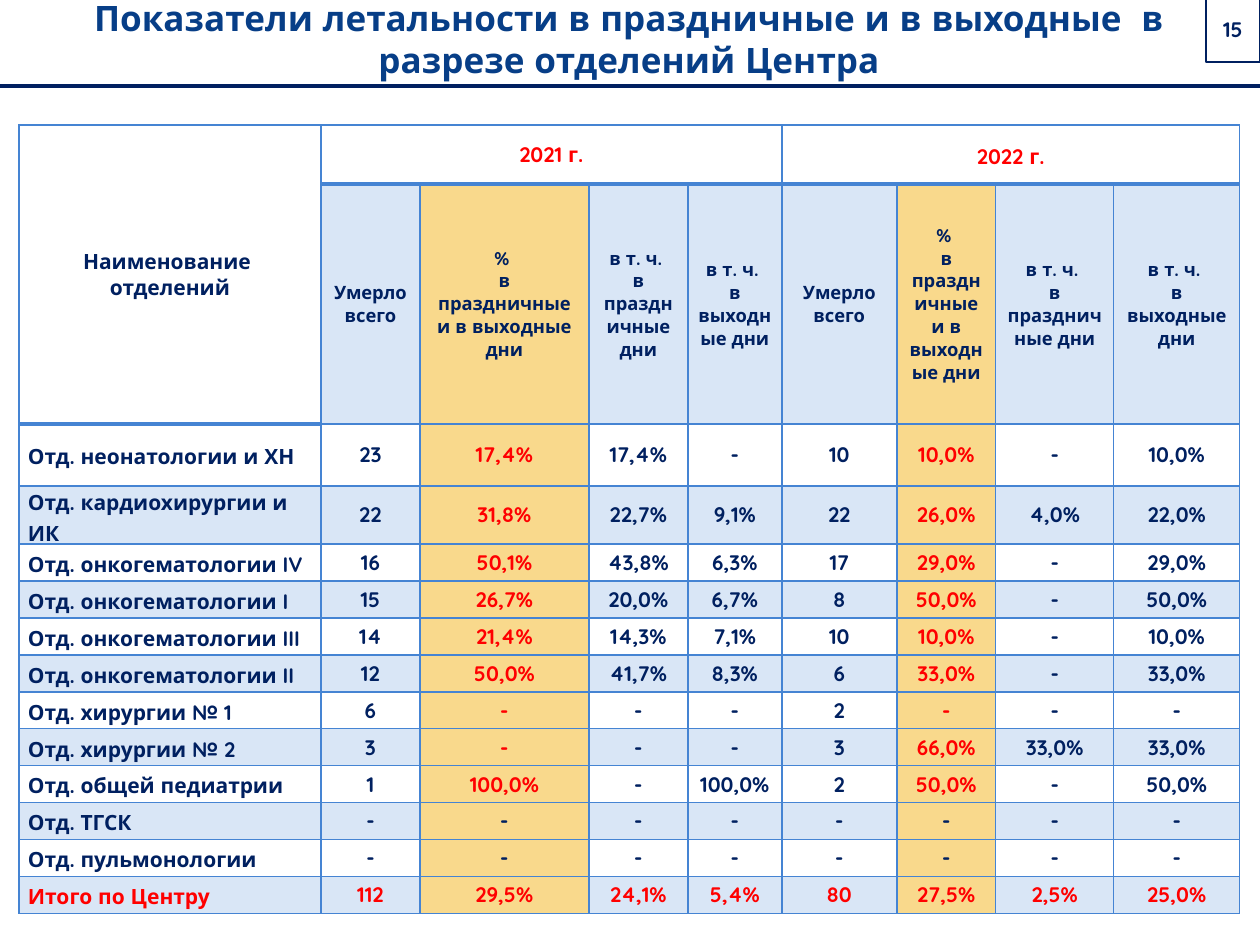
from lxml import etree
from pptx import Presentation
from pptx import util as u
from pptx.dml.color import RGBColor
from pptx.enum import shapes, text
from pptx.oxml import ns

PX = 914400 / 126
NAVY, RED, BLUE, YELLOW = "002060", "FF0000", "4584D3", "F9D98C"
CENTER = text.PP_ALIGN.CENTER


def px(value):
    return u.Emu(round(value * PX))


def write(frame, lines, size, color, align=CENTER, spacing=None):
    frame.word_wrap = True
    frame.vertical_anchor = text.MSO_ANCHOR.MIDDLE
    for index, line in enumerate(lines):
        paragraph = frame.add_paragraph() if index else frame.paragraphs[0]
        paragraph.alignment = align
        if spacing:
            paragraph.line_spacing = spacing
        run = paragraph.add_run()
        run.text = line
        run.font.name, run.font.size, run.font.bold = "Quicksand", u.Pt(size), True
        run.font.color.rgb = RGBColor.from_string(color)


presentation = Presentation()
presentation.slide_width, presentation.slide_height = px(1260), px(945)
slide = presentation.slides.add_slide(presentation.slide_layouts[6])

# Title
title = slide.shapes.add_textbox(px(62), px(9), px(1134), px(58))
write(title.text_frame,
      ["Показатели летальности в праздничные и в выходные  в разрезе отделений Центра"],
      20, "073E87")

# Rule under the title
rule = slide.shapes.add_connector(shapes.MSO_CONNECTOR.STRAIGHT, 0, px(86), px(1260), px(86))
rule.line.color.rgb = RGBColor.from_string(NAVY)
rule.line.width = u.Pt(2.25)
etree.SubElement(rule.element.spPr, ns.qn("a:effectLst"))

# Page number
badge = slide.shapes.add_shape(shapes.MSO_SHAPE.ACTION_BUTTON_CUSTOM,
                               px(1206), px(-4), px(54), px(66))
badge.shadow.inherit = False
badge.fill.background()
badge.line.color.rgb = RGBColor.from_string(NAVY)
badge.line.width = u.Pt(1)
badge.element.spPr.xfrm.set("flipH", "1")
write(badge.text_frame, ["15"], 12, NAVY)

# Table contents
percent = ["% ", "в праздничные и в выходные дни"]
holidays = ["в т. ч. ", "в праздничные дни"]
weekends = ["в т. ч. ", "в выходные дни"]
year_columns = [["Умерло всего"], percent, holidays, weekends]
departments = [
    "Отд. неонатологии и ХН|23|17,4%|17,4%|-|10|10,0%|-|10,0%",
    "Отд. кардиохирургии и ИК|22|31,8%|22,7%|9,1%|22|26,0%|4,0%|22,0%",
    "Отд. онкогематологии IV|16|50,1%|43,8%|6,3%|17|29,0%|-|29,0%",
    "Отд. онкогематологии I|15|26,7%|20,0%|6,7%|8|50,0%|-|50,0%",
    "Отд. онкогематологии III|14|21,4%|14,3%|7,1%|10|10,0%|-|10,0%",
    "Отд. онкогематологии II|12|50,0%|41,7%|8,3%|6|33,0%|-|33,0%",
    "Отд. хирургии № 1|6|-|-|-|2|-|-|-",
    "Отд. хирургии № 2|3|-|-|-|3|66,0%|33,0%|33,0%",
    "Отд. общей педиатрии|1|100,0%|-|100,0%|2|50,0%|-|50,0%",
    "Отд. ТГСК|-|-|-|-|-|-|-|-",
    "Отд. пульмонологии|-|-|-|-|-|-|-|-",
    "Итого по Центру|112|29,5%|24,1%|5,4%|80|27,5%|2,5%|25,0%",
]
rows = [
    [["Наименование ", "отделений"], ["2021 г."], [], [], [], ["2022 г."], [], [], []],
    [[]] + year_columns * 2,
] + [[[value] for value in line.split("|")] for line in departments]
total_row = len(rows) - 1

# Table grid
widths = [302, 99, 169, 99, 94, 115, 99, 118, 126]
heights = [59, 240, 62] + [37] * 11
table = slide.shapes.add_table(len(rows), len(widths), px(19), px(125),
                               px(sum(widths)), px(sum(heights))).table
table.first_row = table.horz_banding = False
for column, width in zip(table.columns, widths):
    column.width = px(width)
for row, height in zip(table.rows, heights):
    row.height = px(height)
table.cell(0, 0).merge(table.cell(1, 0))
table.cell(0, 1).merge(table.cell(0, 4))
table.cell(0, 5).merge(table.cell(0, 8))

for r, row in enumerate(rows):
    for c, lines in enumerate(row):
        cell = table.cell(r, c)
        properties = cell._tc.get_or_add_tcPr()

        # Borders, heavier below the header cells
        heavy_top = r == 1 or (r == 2 and c == 0)
        heavy_bottom = r == 0 or (r == 1 and c == 0)
        for side, points in (("L", 1), ("R", 1), ("T", 1 + heavy_top), ("B", 1 + heavy_bottom)):
            border = etree.SubElement(properties, ns.qn("a:ln" + side), w=str(u.Pt(points)))
            paint = etree.SubElement(border, ns.qn("a:solidFill"))
            etree.SubElement(paint, ns.qn("a:srgbClr"), val=BLUE)

        # Fill: yellow share columns, pale blue on odd rows
        highlighted = r > 0 and c in (2, 6)
        if highlighted:
            cell.fill.solid()
            cell.fill.fore_color.rgb = RGBColor.from_string(YELLOW)
        elif r % 2 and not (r == 1 and c == 0):
            cell.fill.solid()
            cell.fill.fore_color.rgb = RGBColor.from_string(BLUE)
            tint = properties.find(ns.qn("a:solidFill"))[0]
            etree.SubElement(tint, ns.qn("a:alpha"), val="20000")
        else:
            cell.fill.background()

        # Text
        if not lines:
            continue
        if r > 1 or (r == 1 and c in (3, 4, 7, 8)):
            cell.margin_left = cell.margin_right = px(9)
            cell.margin_top = cell.margin_bottom = 0
        elif r == 0 and c == 5:
            cell.margin_left = cell.margin_right = px(15)
            cell.margin_top = cell.margin_bottom = 0
        red = r == total_row or (r == 0 and c > 0) or (highlighted and 2 <= r <= 10)
        name = r > 1 and c == 0
        write(cell.text_frame, lines, 10.5 if r == 1 else 12, RED if red else NAVY,
              text.PP_ALIGN.LEFT if name else CENTER,
              1.15 if name or (r == 0 and c == 5) else None)
        cell.vertical_anchor = text.MSO_ANCHOR.MIDDLE

presentation.save("out.pptx")
